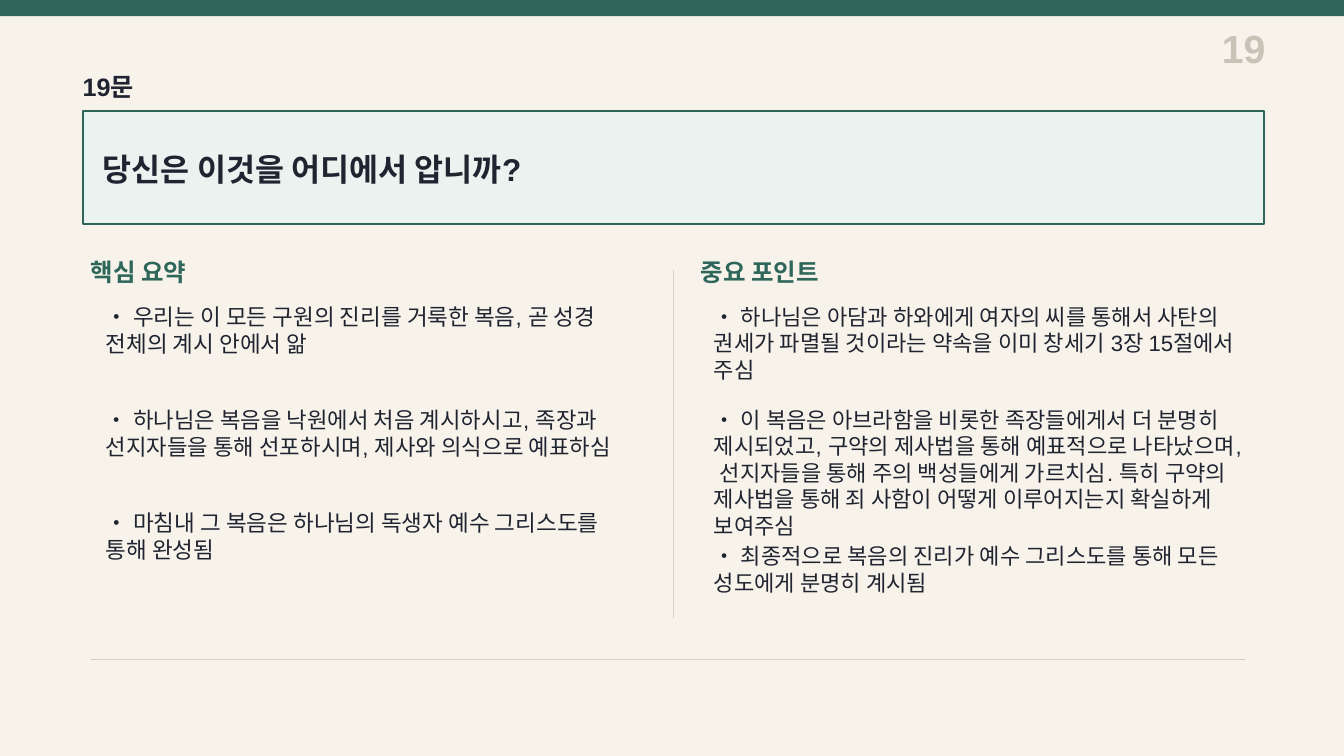
"""Build the question 19 catechism slide: a boxed question above two columns of points."""
from lxml import etree
from pptx import Presentation, util as u
from pptx.dml.color import RGBColor
from pptx.enum import shapes, text
from pptx.oxml.ns import qn

THEME = {
    "font": "Arial",
    "paper": "F7F3EB", "green": "2E665A", "mint": "EAF3F0",
    "ink": "1F2430", "muted": "C9C2B7", "rule": "D8D0C2",
    "number": 28, "label": 18, "question": 22.5, "heading": 17.5,
    "point": 16.1, "point_dense": 15.9, "point_right": 15.8,
}
WIDTH, HEIGHT = 13.33, 7.5
MARGIN = 0.82
ROW_TOP, ROW_STEP = 2.96, 1.02
POINT_WIDTH = 5.38


def color(name):
    return RGBColor.from_string(THEME[name])


def add_text(place, words, size, ink, bold=True, inset=(0, 0),
             anchor=text.MSO_ANCHOR.MIDDLE, align=text.PP_ALIGN.LEFT):
    box = page.shapes.add_textbox(*map(u.Inches, place))
    frame = box.text_frame
    frame.word_wrap = True
    frame.vertical_anchor = anchor
    frame.margin_left = frame.margin_right = u.Inches(inset[0])
    frame.margin_top = frame.margin_bottom = u.Inches(inset[1])
    para = frame.paragraphs[0]
    para.text = words
    para.alignment = align
    para.font.name = THEME["font"]
    para.font.size = u.Pt(THEME[size])
    para.font.bold = bold
    para.font.color.rgb = color(ink)


deck = Presentation()
deck.slide_width, deck.slide_height = u.Inches(WIDTH), u.Inches(HEIGHT)
page = deck.slides.add_slide(deck.slide_layouts[6])
page.background.fill.solid()
page.background.fill.fore_color.rgb = color("paper")

panels = [
    ((0, 0, WIDTH, 0.16), "green", None),
    ((MARGIN, 1.1, 11.72, 1.12), "mint", "green"),
]
for place, fill, outline in panels:
    panel = page.shapes.add_shape(shapes.MSO_SHAPE.RECTANGLE, *map(u.Inches, place))
    panel.shadow.inherit = False
    panel.fill.solid()
    panel.fill.fore_color.rgb = color(fill)
    if outline:
        panel.line.color.rgb = color(outline)
        panel.line.width = u.Pt(1.2)
    else:
        panel.line.fill.background()

add_text((11.55, 0.22, 1, 0.5), "19", "number", "muted", align=text.PP_ALIGN.RIGHT)
add_text((MARGIN, 0.72, 0.9, 0.28), "19문", "label", "ink")
add_text((MARGIN + 0.2, 1.34, 11.28, 0.68), "당신은 이것을 어디에서 압니까?", "question", "ink")

for ends in [(6.68, 2.68, 6.68, 6.13), (0.9, 6.54, 12.35, 6.54)]:
    rule = page.shapes.add_connector(shapes.MSO_CONNECTOR.STRAIGHT, *map(u.Inches, ends))
    rule.line.color.rgb = color("rule")
    rule.line.width = u.Pt(1)
    etree.SubElement(rule._element.spPr, qn("a:effectLst"))

columns = [
    ("핵심 요약", 0.9, 2.4, 0.95, 0.84, [
        (0, "point", "우리는 이 모든 구원의 진리를 거룩한 복음, 곧 성경 전체의 계시 안에서 앎"),
        (1, "point_dense", "하나님은 복음을 낙원에서 처음 계시하시고, 족장과 선지자들을 통해 "
                           "선포하시며, 제사와 의식으로 예표하심"),
        (2, "point", "마침내 그 복음은 하나님의 독생자 예수 그리스도를 통해 완성됨"),
    ]),
    ("중요 포인트", 6.95, 3, 6.98, 1.12, [
        (0, "point_right", "하나님은 아담과 하와에게 여자의 씨를 통해서 사탄의 권세가 파멸될 "
                           "것이라는 약속을 이미 창세기 3장 15절에서 주심"),
        (1, "point_right", "이 복음은 아브라함을 비롯한 족장들에게서 더 분명히 제시되었고, 구약의 "
                           "제사법을 통해 예표적으로 나타났으며, 선지자들을 통해 주의 백성들에게 "
                           "가르치심. 특히 구약의 제사법을 통해 죄 사함이 어떻게 이루어지는지 "
                           "확실하게 보여주심"),
        (2.33, "point_right", "최종적으로 복음의 진리가 예수 그리스도를 통해 모든 성도에게 분명히 계시됨"),
    ]),
]
for heading, heading_left, heading_width, left, height, points in columns:
    add_text((heading_left, 2.58, heading_width, 0.24), heading, "heading", "green")
    for row, size, words in points:
        add_text((left, ROW_TOP + row * ROW_STEP, POINT_WIDTH, height), "• " + words,
                 size, "ink", bold=False, inset=(0.1, 0.05), anchor=text.MSO_ANCHOR.TOP)

deck.save("out.pptx")
